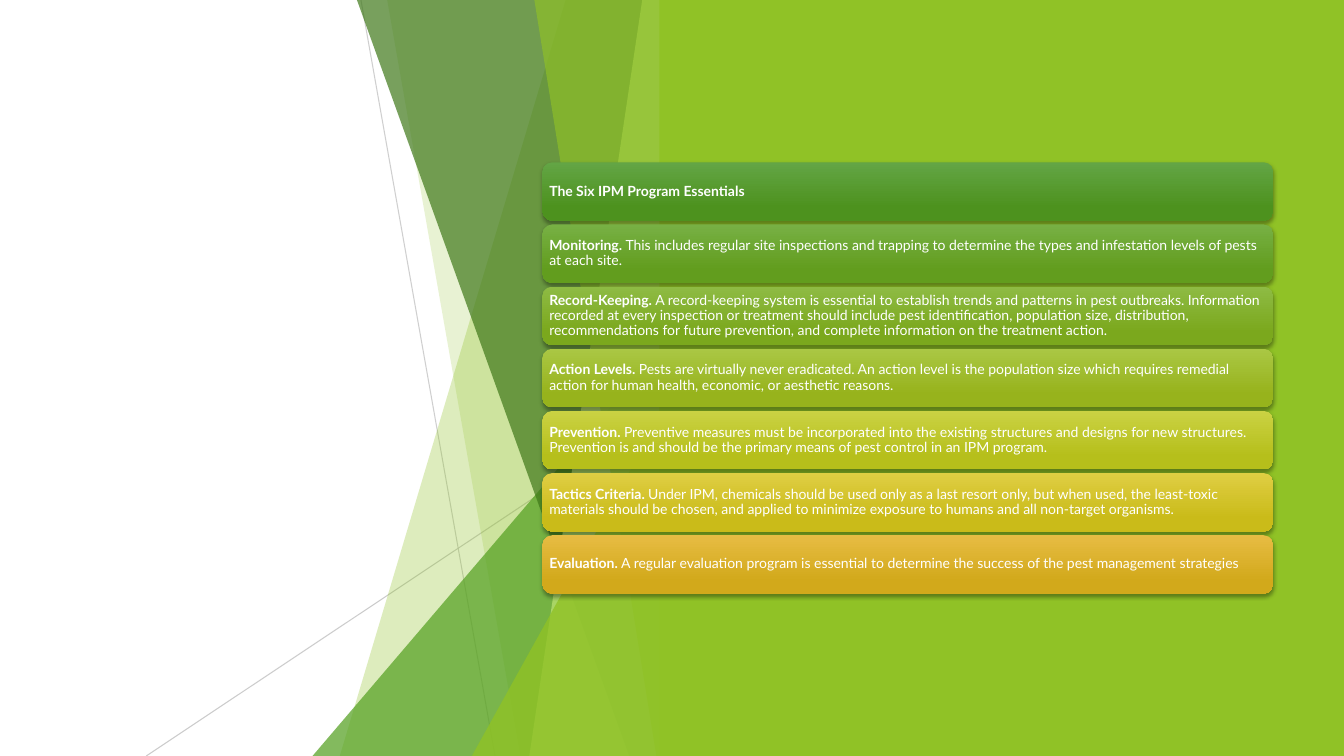
from lxml.etree import SubElement
from pptx import Presentation
from pptx.dml.color import RGBColor
from pptx.enum.shapes import MSO_CONNECTOR as Connector, MSO_SHAPE as Shape
from pptx.enum.text import MSO_ANCHOR as Anchor, PP_ALIGN as Align
from pptx.oxml.ns import qn
from pptx.util import Inches, Pt

WIDTH, HEIGHT = 13.33, 7.5
LIME, GREEN, FOREST, PALE = "90C226", "54A021", "3F7819", "C0E474"
FACET_RIGHT = 6.66
PANEL_LEFT = 6.54

RULES = [((3.58, 0), (4.91, HEIGHT), 75), ((FACET_RIGHT, 4.03), (1.45, HEIGHT), 80)]
FACETS = [
    ("band", 5.61, 3.37, LIME, 30),
    ("band", 3.84, 5.16, LIME, 20),
    ("spike", 3.1, 3.33, GREEN, 72),
    ("band", 3.54, 6.24, FOREST, 70),
    ("band", 6.37, 5.25, PALE, 70),
    ("band", 5.3, 6.51, LIME, 65),
    ("spike", 4.68, 3.93, LIME, 80),
]

CARD_LEFT, CARD_TOP, CARD_WIDTH, CARD_HEIGHT = 5.38, 1.61, 7.25, 0.58
CARD_PITCH = 3.7 / 6
CARDS = [
    ("63A545", "4D921E", "The Six IPM Program Essentials", ""),
    ("77B044", "629D1E", "Monitoring. ",
     "This includes regular site inspections and trapping to determine the types and "
     "infestation levels of pests at each site."),
    ("8EBB44", "7BA81D", "Record-Keeping. ",
     "A record-keeping system is essential to establish trends and patterns in pest outbreaks. "
     "Information recorded at every inspection or treatment should include pest identification, "
     "population size, distribution, recommendations for future prevention, and complete "
     "information on the treatment action."),
    ("AAC744", "97B31C", "Action Levels. ",
     "Pests are virtually never eradicated. An action level is the population size which requires "
     "remedial action for human health, economic, or aesthetic reasons."),
    ("CAD243", "B6BF1B", "Prevention. ",
     "Preventive measures must be incorporated into the existing structures and designs for new "
     "structures. Prevention is and should be the primary means of pest control in an IPM program."),
    ("DFCE43", "CABB19", "Tactics Criteria. ",
     "Under IPM, chemicals should be used only as a last resort only, but when used, the "
     "least-toxic materials should be chosen, and applied to minimize exposure to humans and "
     "all non-target organisms."),
    ("E7BC43", "D2A91B", "Evaluation. ",
     "A regular evaluation program is essential to determine the success of the pest "
     "management strategies"),
]


def color(hex_string):
    return RGBColor.from_string(hex_string)


def set_opacity(shape, percent):
    for node in shape.element.spPr.iter(qn("a:srgbClr")):
        SubElement(node, qn("a:alpha"), val=str(percent * 1000))


def paint(shape, fill, opacity=100):
    shape.shadow.inherit = False
    shape.fill.solid()
    shape.fill.fore_color.rgb = color(fill)
    shape.line.fill.background()
    if opacity < 100:
        set_opacity(shape, opacity)


def add_preset(slide, preset, left, top, width, height):
    return slide.shapes.add_shape(preset, *map(Inches, (left, top, width, height)))


def add_band(slide, top_x, bottom_x):
    corners = [(FACET_RIGHT, 0), (FACET_RIGHT, HEIGHT), (bottom_x, HEIGHT)]
    builder = slide.shapes.build_freeform(Inches(top_x), 0)
    builder.add_line_segments([(Inches(x), Inches(y)) for x, y in corners], close=True)
    return builder.convert_to_shape()


def add_spike(slide, left, top):
    spike = add_preset(slide, Shape.ISOSCELES_TRIANGLE, left, top, FACET_RIGHT - left, HEIGHT - top)
    spike.adjustments[0] = 1
    return spike


def add_rule(slide, start, end, opacity):
    rule = slide.shapes.add_connector(Connector.STRAIGHT, *map(Inches, start + end))
    rule.line.color.rgb = color("BFBFBF")
    rule.line.width = Pt(0.75)
    set_opacity(rule, opacity)
    SubElement(rule.element.spPr, qn("a:effectLst"))


def add_text(paragraph, text, size=10, bold=False, font="Lato", fill="FFFFFF"):
    run = paragraph.add_run()
    run.text = text
    run.font.size, run.font.bold, run.font.name = Pt(size), bold, font
    run.font.color.rgb = color(fill)


def add_card(slide, top, light, dark, label, body):
    card = add_preset(slide, Shape.ROUNDED_RECTANGLE, CARD_LEFT, top, CARD_WIDTH, CARD_HEIGHT)
    card.line.fill.background()
    card.fill.gradient()
    card.fill.gradient_angle = 270
    for stop, position, shade in zip(card.fill.gradient_stops, (0, 0.78), (light, dark)):
        stop.position = position
        stop.color.rgb = color(shade)

    card.shadow.inherit = False
    effects = card.element.spPr.find(qn("a:effectLst"))
    shadow = SubElement(effects, qn("a:outerShdw"), blurRad=str(Pt(3)), dist=str(Pt(2)),
                        dir="5400000", rotWithShape="0")
    black = SubElement(shadow, qn("a:srgbClr"), val="000000")
    SubElement(black, qn("a:alpha"), val="35000")

    frame = card.text_frame
    frame.word_wrap = True
    frame.vertical_anchor = Anchor.MIDDLE
    frame.margin_left = frame.margin_right = frame.margin_top = frame.margin_bottom = Inches(0.04)
    paragraph = frame.paragraphs[0]
    paragraph.alignment = Align.LEFT
    paragraph.line_spacing = 0.9
    add_text(paragraph, label, bold=True)
    if body:
        add_text(paragraph, body)


def main():
    """Build the slide of integrated pest management essentials."""
    presentation = Presentation()
    presentation.slide_width, presentation.slide_height = Inches(WIDTH), Inches(HEIGHT)
    slide = presentation.slides.add_slide(presentation.slide_layouts[6])

    for start, end, opacity in RULES:
        add_rule(slide, start, end, opacity)
    makers = {"band": add_band, "spike": add_spike}
    for kind, first, second, fill, opacity in FACETS:
        paint(makers[kind](slide, first, second), fill, opacity)
    paint(add_preset(slide, Shape.RECTANGLE, PANEL_LEFT, 0, WIDTH - PANEL_LEFT, HEIGHT), LIME)
    for row, card in enumerate(CARDS):
        add_card(slide, CARD_TOP + row * CARD_PITCH, *card)

    presentation.save("out.pptx")


if __name__ == "__main__":
    main()
